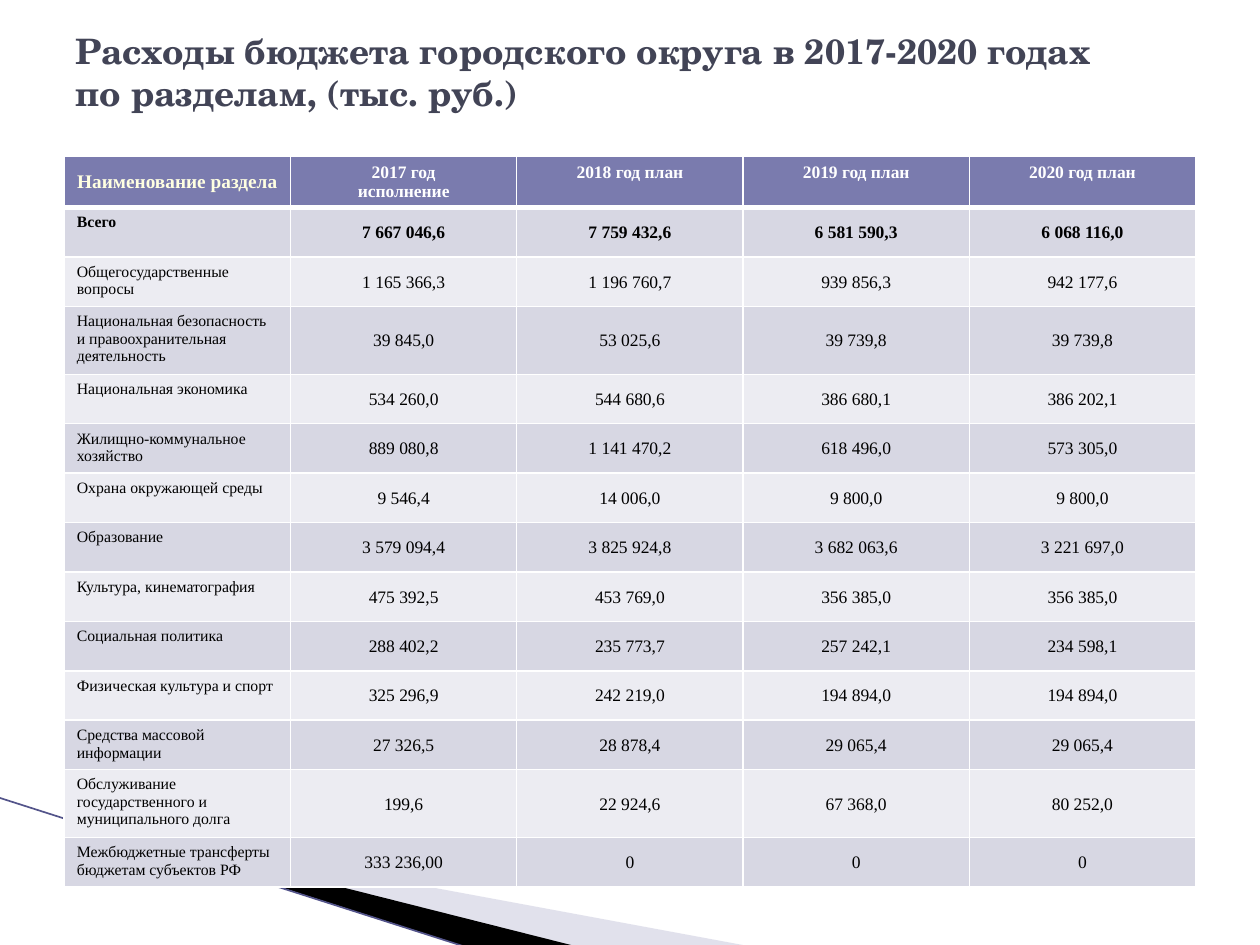
import pptx
import pptx.util
import pptx.dml.color
import pptx.enum.shapes
import pptx.enum.text
import pptx.oxml
import pptx.oxml.ns
from dataclasses import dataclass
from lxml import etree

Inches = pptx.util.Inches
Pt = pptx.util.Pt
Anchor = pptx.enum.text.MSO_ANCHOR
Align = pptx.enum.text.PP_ALIGN


@dataclass(frozen=True)
class Theme:
    title_font: str = "TeX Gyre Schola"
    table_font: str = "Times New Roman"
    title: str = "424456"
    header_fill: str = "7A7BAE"
    header_first: str = "FFFFE1"
    white: str = "FFFFFF"
    black: str = "000000"
    bands: tuple = ("D7D7E3", "ECECF2")
    wedge: str = "B6B6D1"
    ray: str = "53548A"
    title_size: int = 20
    header_first_size: int = 11
    value_size: int = 10
    name_size: int = 9


THEME = Theme()

TITLE = ["Расходы бюджета городского округа в 2017-2020 годах", "по разделам, (тыс. руб.)"]
HEADER = ["Наименование раздела", "2017 год\nисполнение", "2018 год план",
          "2019 год план", "2020 год план"]
ROWS = [
    ["Всего", "7 667 046,6", "7 759 432,6", "6 581 590,3", "6 068 116,0"],
    ["Общегосударственные вопросы", "1 165 366,3", "1 196 760,7", "939 856,3", "942 177,6"],
    ["Национальная безопасность и правоохранительная деятельность",
     "39 845,0", "53 025,6", "39 739,8", "39 739,8"],
    ["Национальная экономика", "534 260,0", "544 680,6", "386 680,1", "386 202,1"],
    ["Жилищно-коммунальное хозяйство", "889 080,8", "1 141 470,2", "618 496,0", "573 305,0"],
    ["Охрана окружающей среды", "9 546,4", "14 006,0", "9 800,0", "9 800,0"],
    ["Образование", "3 579 094,4", "3 825 924,8", "3 682 063,6", "3 221 697,0"],
    ["Культура, кинематография", "475 392,5", "453 769,0", "356 385,0", "356 385,0"],
    ["Социальная политика", "288 402,2", "235 773,7", "257 242,1", "234 598,1"],
    ["Физическая культура и спорт", "325 296,9", "242 219,0", "194 894,0", "194 894,0"],
    ["Средства массовой информации", "27 326,5", "28 878,4", "29 065,4", "29 065,4"],
    ["Обслуживание государственного и муниципального долга",
     "199,6", "22 924,6", "67 368,0", "80 252,0"],
    ["Межбюджетные трансферты бюджетам субъектов РФ", "333 236,00", "0", "0", "0"],
]
TALL_ROWS = (3, 12)  # names that take three lines
TALL_HEIGHT = 0.54


def rgb(value):
    return pptx.dml.color.RGBColor.from_string(value)


def style_font(font, name, size, color, bold):
    font.name, font.size, font.bold = name, Pt(size), bold
    font.color.rgb = rgb(color)


def add_title(slide, left, top, width, height):
    sp = slide.shapes.title
    sp.left, sp.top, sp.width, sp.height = map(Inches, (left, top, width, height))
    tf = sp.text_frame
    tf.word_wrap = True
    tf.auto_size = pptx.enum.text.MSO_AUTO_SIZE.NONE
    tf.vertical_anchor = Anchor.MIDDLE
    p = tf.paragraphs[0]
    p.alignment = Align.LEFT
    for i, line in enumerate(TITLE):
        if i:
            p.add_line_break()
        r = p.add_run()
        r.text = line
        style_font(r.font, THEME.title_font, THEME.title_size, THEME.title, True)


def add_wedge(slide, points, color, alpha=None):
    (x, y), *rest = [(Inches(px), Inches(py)) for px, py in points]
    builder = slide.shapes.build_freeform(x, y)
    builder.add_line_segments(rest, close=True)
    sp = builder.convert_to_shape()
    sp.shadow.inherit = False
    sp.line.fill.background()
    sp.fill.solid()
    sp.fill.fore_color.rgb = rgb(color)
    if alpha:
        clr = sp.fill._xPr.find(".//" + pptx.oxml.ns.qn("a:srgbClr"))
        etree.SubElement(clr, pptx.oxml.ns.qn("a:alpha")).set("val", str(alpha * 1000))


def add_corner(slide, left, top):
    """Rays that spread from the lower left corner of the slide."""
    def at(*points):
        return [(left + x, top + y) for x, y in points]

    add_wedge(slide, at((0.55, 0.18), (5.95, 1.18), (4.56, 1.18), (0.55, 0.17)), THEME.wedge, 40)
    add_wedge(slide, at((0.53, 0.16), (4.57, 1.18), (3.72, 1.19), (0.54, 0.17)), THEME.black)
    start, end = at((-0.01, 0), (3.71, 1.19))
    ray = slide.shapes.add_connector(pptx.enum.shapes.MSO_CONNECTOR.STRAIGHT,
                                     *map(Inches, start + end))
    ray.line.color.rgb = rgb(THEME.ray)
    ray.line.width = Pt(0.95)
    etree.SubElement(ray._element.spPr, pptx.oxml.ns.qn("a:effectLst"))


def set_borders(cell, bottom):
    """White rules go in front of the cell's fill."""
    tcPr = cell._tc.get_or_add_tcPr()
    for i, (side, width) in enumerate((("L", 1), ("R", 1), ("T", 1), ("B", bottom))):
        tcPr.insert(i, pptx.oxml.parse_xml(
            f'<a:ln{side} {pptx.oxml.ns.nsdecls("a")} w="{Pt(width)}"><a:solidFill>'
            f'<a:srgbClr val="{THEME.white}"/></a:solidFill></a:ln{side}>'))


def fill_cell(cell, text, fill, size, color, bold, align, anchor, bottom=1):
    cell.text_frame.text = text
    cell.vertical_anchor = anchor
    cell.fill.solid()
    cell.fill.fore_color.rgb = rgb(fill)
    for p in cell.text_frame.paragraphs:
        p.alignment = align
        for r in p.runs:
            style_font(r.font, THEME.table_font, size, color, bold)
    set_borders(cell, bottom)


def add_budget_table(slide, left, top, width, height):
    count = len(ROWS) + 1
    table = slide.shapes.add_table(count, len(HEADER),
                                   *map(Inches, (left, top, width, height))).table
    normal = (height - len(TALL_ROWS) * TALL_HEIGHT) / (count - len(TALL_ROWS))
    for i, row in enumerate(table.rows):
        row.height = Inches(TALL_HEIGHT if i in TALL_ROWS else normal)
    for col in table.columns:
        col.width = Inches(width / len(HEADER))

    # Header row
    for c, text in enumerate(HEADER):
        first = c == 0
        fill_cell(table.cell(0, c), text, THEME.header_fill,
                  THEME.header_first_size if first else THEME.value_size,
                  THEME.header_first if first else THEME.white,
                  True, Align.CENTER, Anchor.MIDDLE if first else Anchor.TOP, bottom=3)

    # Section rows, the total in bold
    for i, (name, *values) in enumerate(ROWS):
        fill, bold = THEME.bands[i % 2], i == 0
        fill_cell(table.cell(i + 1, 0), name, fill, THEME.name_size, THEME.black,
                  bold, Align.LEFT, Anchor.TOP, bottom=1)
        for c, value in enumerate(values, 1):
            cell = table.cell(i + 1, c)
            cell.margin_left = cell.margin_right = cell.margin_top = Inches(0.01)
            cell.margin_bottom = 0
            fill_cell(cell, value, fill, THEME.value_size, THEME.black,
                      bold, Align.CENTER, Anchor.MIDDLE)
    for c in range(len(HEADER)):
        top_rule = table.cell(1, c)._tc.tcPr.find(pptx.oxml.ns.qn("a:lnT"))
        top_rule.set("w", str(Pt(3)))


def main():
    prs = pptx.Presentation()
    prs.slide_width, prs.slide_height = Inches(10), Inches(7.5)
    slide = prs.slides.add_slide(prs.slide_layouts[5])
    add_corner(slide, 0, 6.33)
    add_budget_table(slide, 0.51, 1.24, 8.98, 5.79)
    add_title(slide, 0.5, 0.13, 9, 0.87)
    prs.save("out.pptx")


if __name__ == "__main__":
    main()
